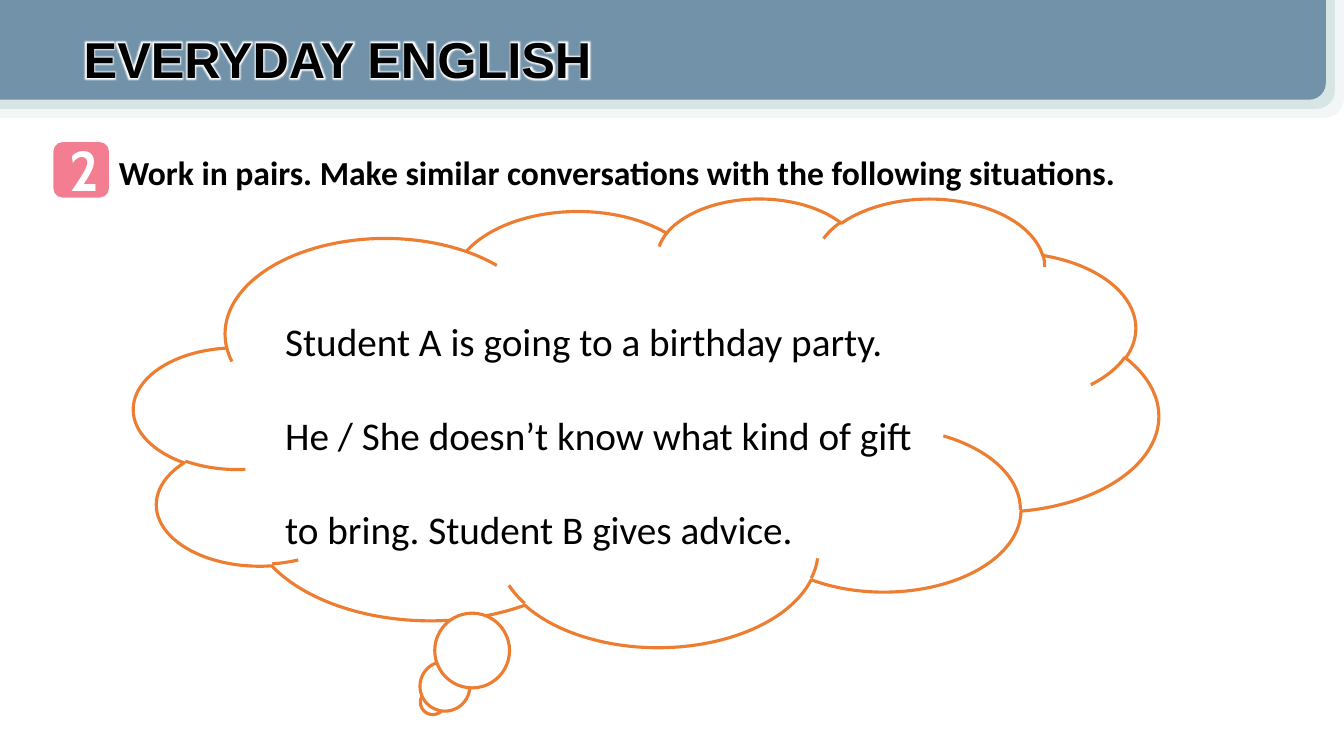
"""Build the Everyday English pair-work slide with a thought-cloud situation."""
from lxml import etree
from pptx import Presentation
from pptx.dml.color import RGBColor
from pptx.enum.shapes import MSO_SHAPE
from pptx.enum.text import MSO_ANCHOR, PP_ALIGN
from pptx.oxml.ns import qn
from pptx.util import Inches, Pt

ROUND, BANNER, CLOUD = (MSO_SHAPE.ROUNDED_RECTANGLE, MSO_SHAPE.ROUND_1_RECTANGLE,
                        MSO_SHAPE.CLOUD_CALLOUT)
LEFT, CENTER = PP_ALIGN.LEFT, PP_ALIGN.CENTER
TOP, MIDDLE = MSO_ANCHOR.TOP, MSO_ANCHOR.MIDDLE

COLORS = {"black": "000000", "white": "FFFFFF", "pink": "F37D91", "orange": "ED7D31",
          "pale": "F3F6F6", "mist": "D8E5E5", "slate": "7192A9"}
TITLE = "EVERYDAY ENGLISH"
NUMBER = "2"
TASK = "Work in pairs. Make similar conversations with the following situations."
SITUATION = ["Student A is going to a birthday party.",
             "He / She doesn’t know what kind of gift",
             "to bring. Student B gives advice."]
BANNER_LAYERS = ["pale", "mist", "slate"]
BANNER_SIZE, BANNER_STEP = (13.33, 1.18), 0.09

TITLE_FONT = {"name": "Arial", "size": Pt(36), "bold": True}
NUMBER_FONT = {"name": "Cabin", "size": Pt(40), "bold": True}
TASK_FONT = {"name": "Calibri", "size": Pt(24), "bold": True}
SITUATION_FONT = {"name": "Calibri", "size": Pt(28), "bold": False}


def rgb(name):
    return RGBColor.from_string(COLORS[name])


def add_shape(s, kind, box, fill, line=None):
    sp = s.shapes.add_shape(kind, *map(Inches, box))
    sp.shadow.inherit = False
    sp.fill.solid()
    sp.fill.fore_color.rgb = rgb(fill)
    if line:
        sp.line.color.rgb = rgb(line)
        sp.line.width = Pt(2.25)
    else:
        sp.line.fill.background()
    return sp


def write(sp, lines, font, color="black", align=LEFT, anchor=TOP, spacing=1.0):
    tf = sp.text_frame
    tf.word_wrap = True
    tf.vertical_anchor = anchor
    for i, line in enumerate(lines):
        p = tf.add_paragraph() if i else tf.paragraphs[0]
        p.alignment = align
        p.line_spacing = spacing
        r = p.add_run()
        r.text = line
        for key, value in font.items():
            setattr(r.font, key, value)
        r.font.color.rgb = rgb(color)


def add_text(s, box, *args, **kwargs):
    write(s.shapes.add_textbox(*map(Inches, box)), *args, **kwargs)


def add_glow(r, color, radius):
    fill = r.font._element.find(qn("a:solidFill"))
    effects = etree.Element(qn("a:effectLst"))
    glow = etree.SubElement(effects, qn("a:glow"), rad=str(radius))
    etree.SubElement(glow, qn("a:srgbClr"), val=COLORS[color])
    fill.addnext(effects)


def add_banner(s):
    width, height = BANNER_SIZE
    for i, color in enumerate(BANNER_LAYERS):
        inset = i * BANNER_STEP
        sp = add_shape(s, BANNER, (0, -0.01, width - inset, height - inset), color)
        sp._element.spPr.find(qn("a:xfrm")).set("flipV", "1")


def add_title(s):
    title = s.shapes.title
    title.left, title.top, title.width, title.height = map(Inches, (0.73, 0.22, 5.61, 0.71))
    write(title, [TITLE], TITLE_FONT, anchor=MIDDLE)
    add_glow(title.text_frame.paragraphs[0].runs[0], "white", Pt(5))
    s.shapes._spTree.append(title._element)


def main():
    prs = Presentation()
    prs.slide_width, prs.slide_height = Inches(13.33), Inches(7.5)
    s = prs.slides.add_slide(prs.slide_layouts[5])
    add_shape(s, ROUND, (0.53, 1.41, 0.55, 0.55), "pink")
    add_text(s, (0.59, 1.3, 0.43, 0.77), [NUMBER], NUMBER_FONT, "white", CENTER)
    add_text(s, (1.08, 1.46, 11.6, 0.5), [TASK], TASK_FONT)
    add_banner(s)
    add_title(s)
    cloud = add_shape(s, CLOUD, (1.33, 1.96, 10.16, 4.45), "white", "orange")
    write(cloud, SITUATION, SITUATION_FONT, anchor=MIDDLE, spacing=2.0)
    prs.save("out.pptx")


if __name__ == "__main__":
    main()
